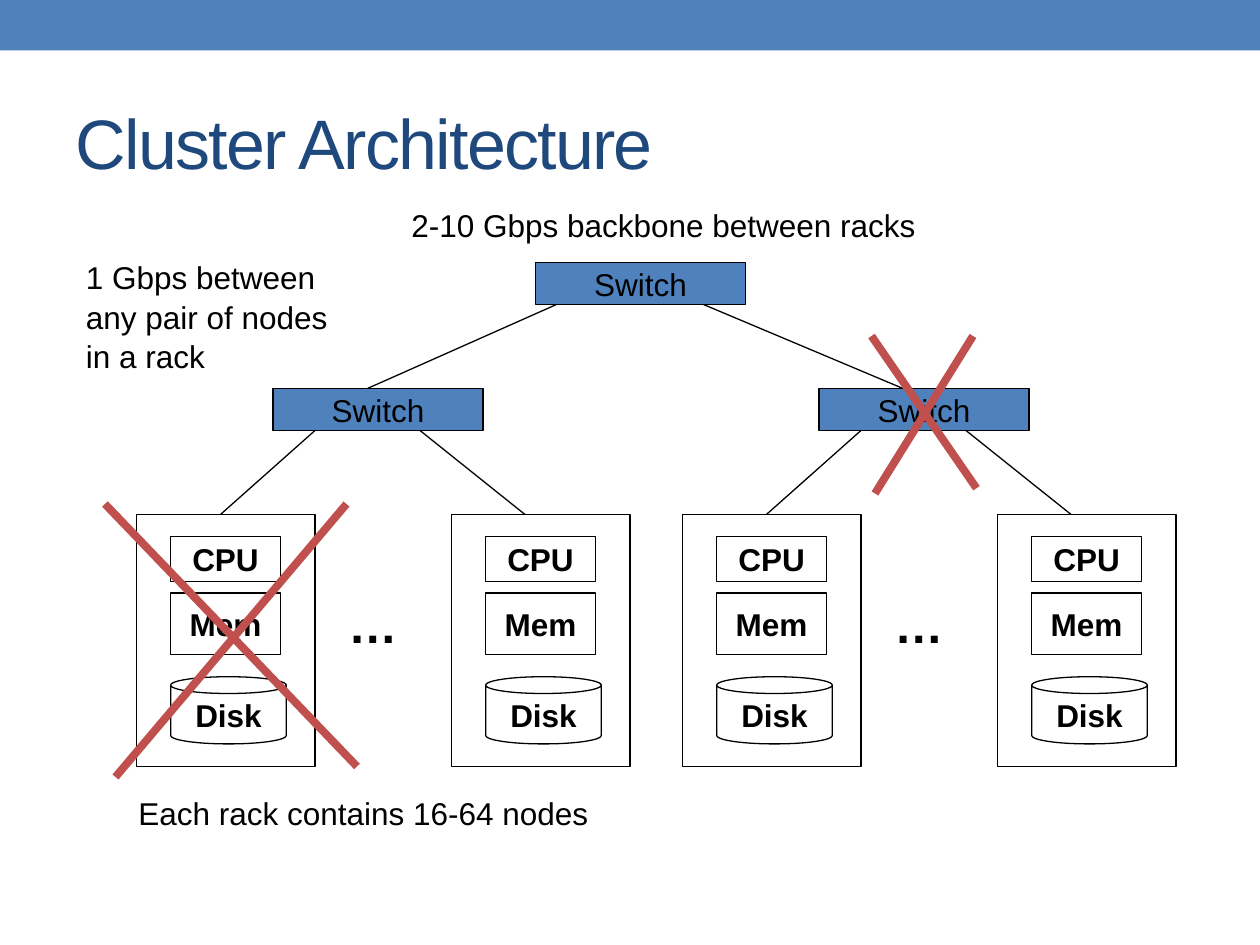
import pptx
import pptx.util
import pptx.dml.color
import pptx.enum.shapes
import pptx.enum.text
import pptx.oxml.ns
import lxml.etree

Pt = pptx.util.Pt
RGB = pptx.dml.color.RGBColor
MSO = pptx.enum.shapes.MSO_SHAPE
ALIGN = pptx.enum.text.PP_ALIGN
ANCHOR = pptx.enum.text.MSO_ANCHOR

BLUE = RGB(0x4F, 0x81, 0xBD)
NAVY = RGB(0x1F, 0x49, 0x7D)
RED = RGB(0xC0, 0x50, 0x4D)
BLACK = RGB(0, 0, 0)
FONT = "Arial"

TITLE = "Cluster Architecture"

# left, top, width, height, lines
NOTES = [
    (228, 114, 340, 29, ["2-10 Gbps backbone between racks"]),
    (42, 144, 172, 72, ["1 Gbps between", "any pair of nodes", "in a rack"]),
    (72, 450, 305, 29, ["Each rack contains 16-64 nodes"]),
]

# label, shape, top, width, height
NODE_PARTS = [
    ("CPU", MSO.RECTANGLE, 306.7, 62.6, 25.7),
    ("Mem", MSO.RECTANGLE, 338.8, 62.6, 35.4),
    ("Disk", MSO.CAN, 386.7, 66, 38.4),
]
NODE_TOP, NODE_W, NODE_H = 294, 102, 144
PART_INDENT = 19.6

RACK_LEFTS = (78, 390)
NODE_STEP = 180
SWITCH_W, SWITCH_H = 120, 24
ROOT_LEFT, ROOT_TOP, SWITCH_TOP = 306, 150, 222

BACKBONE = [(210, SWITCH_TOP, 318, ROOT_TOP + SWITCH_H),
            (402, ROOT_TOP + SWITCH_H, 516, SWITCH_TOP)]
FAILURES = [
    (60, 288, 204, 438), (198, 288, 66, 444),
    (498, 192, 558, 279), (556, 192, 500, 282),
]


def style(p, size, bold=False, color=BLACK):
    p.font.name, p.font.size = FONT, Pt(size)
    p.font.bold, p.font.color.rgb = bold, color


def box(s, kind, left, top, w, h, label="", fill=None, bold=False):
    sp = s.shapes.add_shape(kind, Pt(left), Pt(top), Pt(w), Pt(h))
    sp.shadow.inherit = False
    if fill is None:
        sp.fill.background()
    else:
        sp.fill.solid()
        sp.fill.fore_color.rgb = fill
    sp.line.color.rgb, sp.line.width = BLACK, Pt(0.75)
    if label:
        tf = sp.text_frame
        tf.word_wrap = False
        tf.vertical_anchor = ANCHOR.MIDDLE
        p = tf.paragraphs[0]
        p.text, p.alignment = label, ALIGN.CENTER
        style(p, 18, bold)
    return sp


def line(s, x1, y1, x2, y2, color=BLACK, width=0.75):
    c = s.shapes.add_connector(pptx.enum.shapes.MSO_CONNECTOR.STRAIGHT,
                               Pt(x1), Pt(y1), Pt(x2), Pt(y2))
    c.line.color.rgb, c.line.width = color, Pt(width)
    sp_pr = c._element.spPr
    lxml.etree.SubElement(sp_pr, pptx.oxml.ns.qn("a:effectLst"))


def text(s, left, top, w, h, lines, size=18, bold=False):
    tf = s.shapes.add_textbox(Pt(left), Pt(top), Pt(w), Pt(h)).text_frame
    tf.word_wrap = True
    for i, content in enumerate(lines):
        p = tf.add_paragraph() if i else tf.paragraphs[0]
        p.text = content
        p.space_before = Pt(1)
        style(p, size, bold)


def switch(s, left, top):
    box(s, MSO.RECTANGLE, left, top, SWITCH_W, SWITCH_H, "Switch", BLUE)


def node(s, left):
    box(s, MSO.RECTANGLE, left, NODE_TOP, NODE_W, NODE_H)
    for label, kind, top, w, h in NODE_PARTS:
        box(s, kind, left + PART_INDENT, top, w, h, label, bold=True)


def rack(s, left):
    """Draw one switch, its first and last node, and the links between them."""
    node(s, left)
    node(s, left + NODE_STEP)
    text(s, left + 114, 336, 44, 41, ["…"], 28, True)
    switch(s, left + 78, SWITCH_TOP)
    bottom = SWITCH_TOP + SWITCH_H
    line(s, left + 102, bottom, left + 48, NODE_TOP)
    line(s, left + 162, bottom, left + 222, NODE_TOP)


def main():
    prs = pptx.Presentation()
    prs.slide_width, prs.slide_height = Pt(720), Pt(540)
    s = prs.slides.add_slide(prs.slide_layouts[5])

    bar = box(s, MSO.RECTANGLE, 0, 0, 720, 28.8, fill=BLUE)
    bar.line.fill.background()

    title = s.shapes.title
    title.left, title.top, title.width, title.height = Pt(36), Pt(42), Pt(648), Pt(78)
    title.text_frame.vertical_anchor = ANCHOR.MIDDLE
    p = title.text_frame.paragraphs[0]
    p.text, p.alignment = TITLE, ALIGN.LEFT
    style(p, 40, color=NAVY)
    p.runs[0].font._element.set("spc", "-100")

    for left in RACK_LEFTS:
        rack(s, left)
    switch(s, ROOT_LEFT, ROOT_TOP)
    for ends in BACKBONE:
        line(s, *ends)
    for note in NOTES:
        text(s, *note)
    for ends in FAILURES:
        line(s, *ends, RED, 4.5)

    prs.save("out.pptx")


if __name__ == "__main__":
    main()
